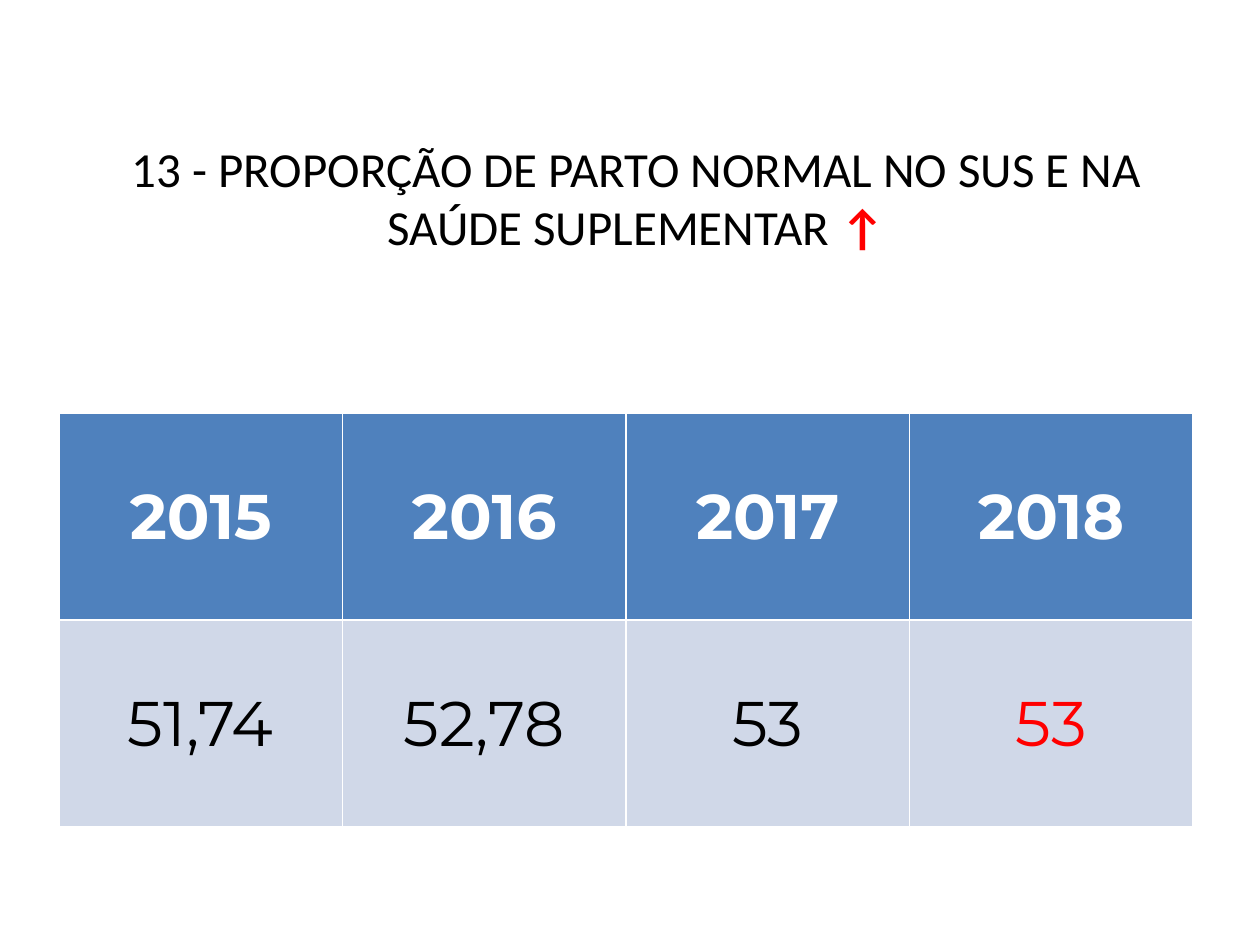
from dataclasses import dataclass

from pptx import Presentation
from pptx.dml.color import RGBColor
from pptx.enum import text
from pptx.util import Pt

PX = 914400 / 126
BLACK = RGBColor(0x00, 0x00, 0x00)
WHITE = RGBColor(0xFF, 0xFF, 0xFF)
RED = RGBColor(0xFF, 0x00, 0x00)
BLUE = RGBColor(0x4F, 0x81, 0xBD)
PALE_BLUE = RGBColor(0xD0, 0xD8, 0xE8)


@dataclass(frozen=True)
class Year:
    label: str
    share: str
    color: RGBColor = BLACK


YEARS = [
    Year("2015", "51,74"),
    Year("2016", "52,78"),
    Year("2017", "53"),
    Year("2018", "53", RED),
]


def px(n: int) -> int:
    return round(n * PX)


def add_run(p, content: str, *, font: str, size: int, color: RGBColor, bold: bool = False) -> None:
    r = p.add_run()
    r.text = content
    r.font.name = font
    r.font.size = Pt(size)
    r.font.bold = bold
    r.font.color.rgb = color


def add_title(slide) -> None:
    sp = slide.shapes.title
    sp.left, sp.top, sp.width, sp.height = px(69), px(20), px(1134), px(354)
    tf = sp.text_frame
    tf.word_wrap = True
    tf.auto_size = text.MSO_AUTO_SIZE.NONE
    tf.vertical_anchor = text.MSO_ANCHOR.MIDDLE
    p = tf.paragraphs[0]
    p.alignment = text.PP_ALIGN.CENTER
    add_run(p, "13 - PROPORÇÃO DE PARTO NORMAL NO SUS E NA SAÚDE SUPLEMENTAR ",
            font="Calibri", size=28, color=BLACK)
    add_run(p, "↑", font="Calibri", size=28, color=RED, bold=True)


def fill_cell(cell, content: str, *, fill: RGBColor, color: RGBColor, bold: bool = False) -> None:
    cell.fill.solid()
    cell.fill.fore_color.rgb = fill
    cell.vertical_anchor = text.MSO_ANCHOR.MIDDLE
    p = cell.text_frame.paragraphs[0]
    p.alignment = text.PP_ALIGN.CENTER
    add_run(p, content, font="Montserrat", size=36, color=color, bold=bold)


def add_year_table(slide, years: list[Year]) -> None:
    table = slide.shapes.add_table(2, len(years), px(59), px(413), px(1134), px(414)).table
    for col, year in enumerate(years):
        fill_cell(table.cell(0, col), year.label, fill=BLUE, color=WHITE, bold=True)
        fill_cell(table.cell(1, col), year.share, fill=PALE_BLUE, color=year.color)


def main() -> None:
    prs = Presentation()
    prs.slide_width, prs.slide_height = px(1260), px(945)
    slide = prs.slides.add_slide(prs.slide_layouts[5])
    add_title(slide)
    add_year_table(slide, YEARS)
    prs.save("out.pptx")


if __name__ == "__main__":
    main()
